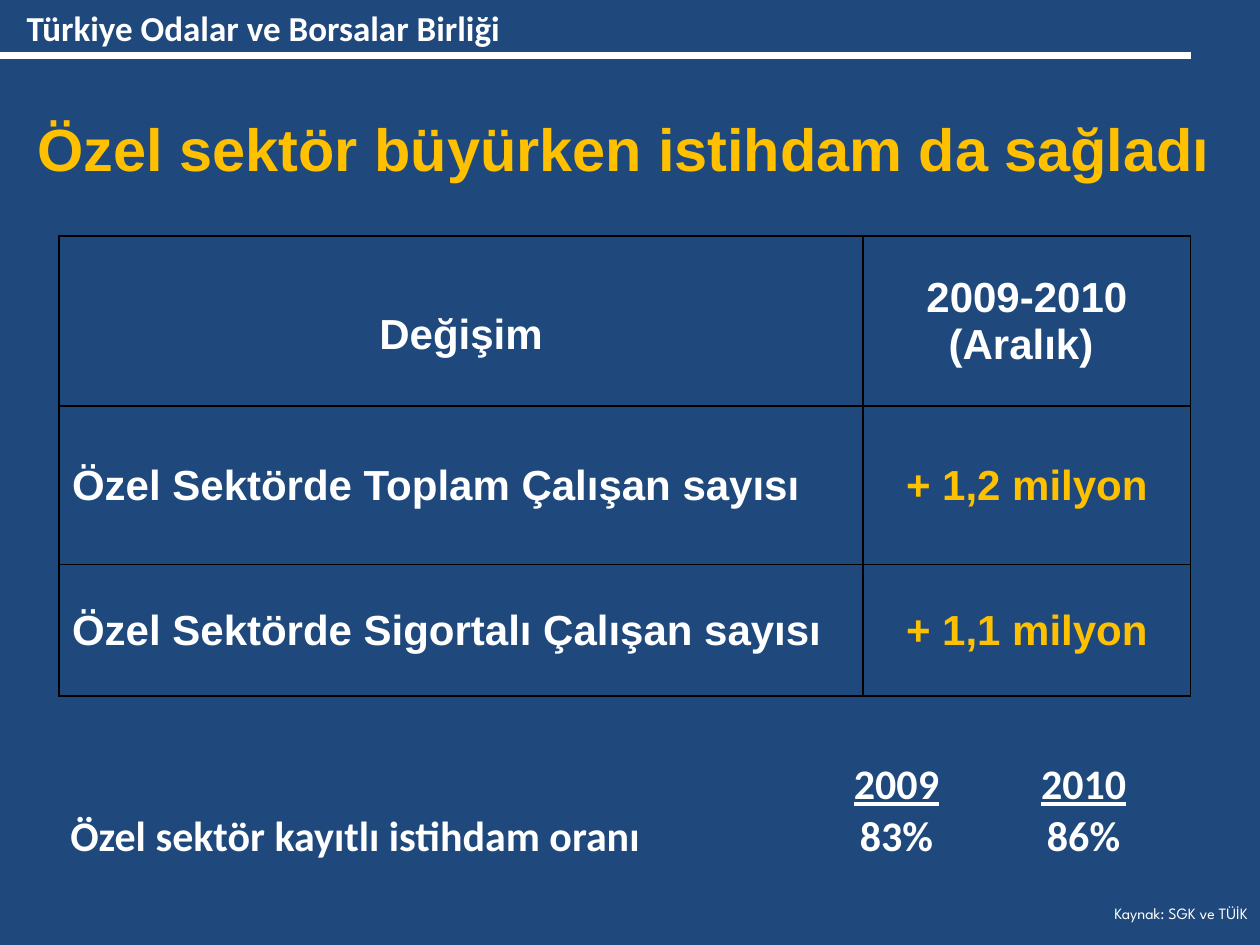
from pptx import Presentation
from pptx.dml.color import RGBColor
from pptx.enum import text as t
from pptx.oxml import parse_xml
from pptx.oxml.ns import nsdecls
from pptx.util import Pt

WHITE, GOLD, BLACK, NAVY = "FFFFFF", "FFC000", "000000", "1F497D"
PLAIN = "{2D5ABB26-0587-4C30-8999-92F81FD0307C}"
LEFT, MID, RIGHT = t.PP_ALIGN.LEFT, t.PP_ALIGN.CENTER, t.PP_ALIGN.RIGHT
TOP, CENTER, LOW = t.MSO_ANCHOR.TOP, t.MSO_ANCHOR.MIDDLE, t.MSO_ANCHOR.BOTTOM


def paint(color, tone):
    color.rgb = RGBColor.from_string(tone)


def write(frame, words, size, face, tone, align=LEFT, bold=True, line=False):
    frame.text = words
    for para in frame.paragraphs:
        para.alignment = align
        font = para.font
        font.size, font.name, font.bold, font.underline = Pt(size), face, bold, line
        paint(font.color, tone)


def place(shape, box):
    shape.left, shape.top, shape.width, shape.height = map(Pt, box)


def header(slide, x, y, w, h):
    rule = slide.shapes.add_connector(1, Pt(x), Pt(y + h), Pt(x + w), Pt(y + h))
    paint(rule.line.color, WHITE)
    rule.line.width = Pt(4)
    rule._element.spPr.append(parse_xml(f"<a:effectLst {nsdecls('a')}/>"))
    frame = slide.shapes.add_textbox(Pt(x), Pt(y), Pt(w / 2), Pt(h)).text_frame
    frame.word_wrap = True
    frame.margin_left = Pt(15.3)
    write(frame, "Türkiye Odalar ve Borsalar Birliği", 20, "Calibri", WHITE)


def title(slide, *box):
    shape = slide.shapes.title
    place(shape, box)
    frame = shape.text_frame
    write(frame, "Özel sektör büyürken istihdam da sağladı", 34, "Arial", GOLD)
    frame.auto_size = t.MSO_AUTO_SIZE.NONE
    frame.vertical_anchor = TOP


def credit(slide, *box):
    frame = slide.shapes.add_textbox(*map(Pt, box)).text_frame
    frame.word_wrap = False
    frame.vertical_anchor = CENTER
    write(frame, "Kaynak: SGK ve TÜİK", 9, "League Spartan", WHITE, RIGHT, False)


def grid(slide, x, y, cols, rows):
    size = len(rows), len(cols)
    table = slide.shapes.add_table(
        *size, Pt(x), Pt(y), Pt(sum(cols)), Pt(sum(rows))).table
    table.first_row = table.horz_banding = False
    table._tbl.tblPr[0].text = PLAIN
    for col, w in zip(table.columns, cols):
        col.width = Pt(w)
    for row, h in zip(table.rows, rows):
        row.height = Pt(h)
    for cell in table.iter_cells():
        cell.fill.background()
        cell.margin_left = cell.margin_right = cell.margin_top = Pt(0.7)
        cell.margin_bottom = 0
    return table


def border(cell):
    props = cell._tc.get_or_add_tcPr()
    for at, side in enumerate("LRTB"):
        props.insert(at, parse_xml(
            f'<a:ln{side} {nsdecls("a")} w="12700"><a:solidFill>'
            f'<a:srgbClr val="{BLACK}"/></a:solidFill></a:ln{side}>'))


def change(slide, x, y):
    data = [("Değişim", "2009-2010\n(Aralık) "),
            ("Özel Sektörde Toplam Çalışan sayısı", "+ 1,2 milyon"),
            ("Özel Sektörde Sigortalı Çalışan sayısı", "+ 1,1 milyon")]
    table = grid(slide, x, y, [459.4, 187.2], [97.2, 90.7, 75])
    for r, line in enumerate(data):
        for c, words in enumerate(line):
            cell = table.cell(r, c)
            border(cell)
            cell.vertical_anchor = CENTER
            label = r > 0 and c == 0
            if label:
                cell.margin_left = Pt(7.4)
            write(cell.text_frame, words, 24, "Arial",
                  GOLD if r and c else WHITE, LEFT if label else MID)
    head = table.cell(0, 0)
    head.vertical_anchor = LOW
    head.margin_bottom = Pt(27)


def ratio(slide, x, y):
    data = [("", "2009", "2010"),
            ("Özel sektör kayıtlı istihdam oranı", "83%", "86%")]
    table = grid(slide, x, y, [427.7, 90, 123.8], [29.5, 29.5])
    for r, line in enumerate(data):
        for c, words in enumerate(line):
            cell = table.cell(r, c)
            cell.vertical_anchor = LOW
            write(cell.text_frame, words, 24, "Calibri", WHITE,
                  MID if c else LEFT, line=r == 0)


def main():
    deck = Presentation()
    deck.slide_width, deck.slide_height = Pt(720), Pt(540)
    slide = deck.slides.add_slide(deck.slide_layouts[5])
    fill = slide.background.fill
    fill.solid()
    paint(fill.fore_color, NAVY)
    header(slide, 0, 0, 680.4, 31.7)
    change(slide, 33.8, 134.8)
    title(slide, 14.4, 60.5, 705.6, 48.2)
    credit(slide, 615.6, 512.6, 104.4, 18)
    ratio(slide, 39.6, 433.4)
    deck.save("out.pptx")


if __name__ == "__main__":
    main()
